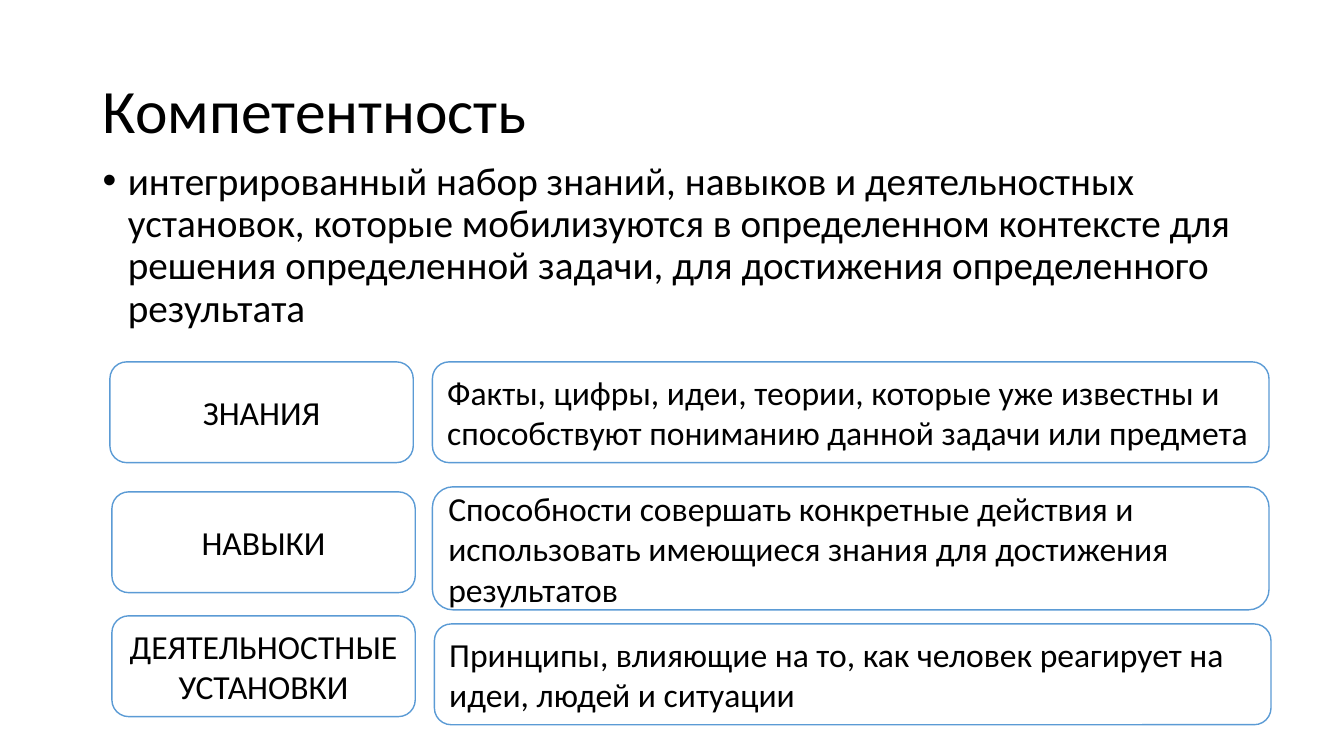
from lxml import etree
from pptx import Presentation
from pptx.dml.color import RGBColor
from pptx.enum.shapes import MSO_SHAPE as Shape
from pptx.enum.text import MSO_ANCHOR as Anchor, PP_ALIGN as Align
from pptx.oxml.ns import qn
from pptx.util import Emu, Inches, Pt

# Content
TITLE = "Компетентность"
DEFINITION = ("интегрированный набор знаний, навыков и деятельностных установок, "
              "которые мобилизуются в определенном контексте для решения "
              "определенной задачи, для достижения определенного результата")
# Each component: (name, left, top), (meaning, left, top, height)
COMPONENTS = [
    (("ЗНАНИЯ", 1.09, 3.59),
     ("Факты, цифры, идеи, теории, которые уже известны и способствуют "
      "пониманию данной задачи или предмета", 4.29, 3.59, 1)),
    (("НАВЫКИ", 1.11, 4.88),
     ("Способности совершать конкретные действия и использовать имеющиеся "
      "знания для достижения результатов", 4.29, 4.83, 1.22)),
    (("ДЕЯТЕЛЬНОСТНЫЕ УСТАНОВКИ", 1.11, 6.11),
     ("Принципы, влияющие на то, как человек реагирует на идеи, людей и "
      "ситуации", 4.31, 6.19, 1)),
]
NAME_WIDTH, MEANING_WIDTH, NAME_HEIGHT = 3.01, 8.3, 1
MARGIN, TEXT_WIDTH = 0.92, 11.5
FONT, INK, PAPER, OUTLINE = "Calibri", "000000", "FFFFFF", "5B9BD5"


def color(value):
    return RGBColor.from_string(value)


def write(shape, text, size, anchor=Anchor.MIDDLE, align=Align.LEFT,
          spacing=None, before=None, bullet=None):
    frame = shape.text_frame
    frame.word_wrap = True
    frame.vertical_anchor = anchor
    paragraph = frame.paragraphs[0]
    paragraph.alignment = align
    if spacing:
        paragraph.line_spacing = spacing
    if before:
        paragraph.space_before = Pt(before)
    if bullet:
        props = paragraph._p.get_or_add_pPr()
        props.set("marL", str(Inches(0.25)))
        props.set("indent", str(-Inches(0.25)))
        etree.SubElement(props, qn("a:buFont")).set("typeface", "Arial")
        etree.SubElement(props, qn("a:buChar")).set("char", bullet)
    run = paragraph.add_run()
    run.text = text
    run.font.name = FONT
    run.font.size = Pt(size)
    run.font.color.rgb = color(INK)


def add_card(slide, text, left, top, width, height, align):
    card = slide.shapes.add_shape(Shape.ROUNDED_RECTANGLE,
                                  *map(Inches, (left, top, width, height)))
    card.shadow.inherit = False
    card.fill.solid()
    card.fill.fore_color.rgb = color(PAPER)
    card.line.color.rgb = color(OUTLINE)
    card.line.width = Pt(1)
    write(card, text, 24, align=align)


def add_text(slide, text, top, height, size, **style):
    box = slide.shapes.add_textbox(*map(Inches, (MARGIN, top, TEXT_WIDTH, height)))
    write(box, text, size, spacing=0.9, **style)


def main():
    deck = Presentation()
    deck.slide_width, deck.slide_height = Emu(12192000), Inches(7.5)
    slide = deck.slides.add_slide(deck.slide_layouts[6])

    # Heading and definition
    add_text(slide, TITLE, 0.4, 1.45, 44)
    add_text(slide, DEFINITION, 1.55, 4.76, 28,
             anchor=Anchor.TOP, before=10, bullet="•")

    # Names on the left, meanings on the right
    for (name, name_left, name_top), (meaning, left, top, height) in COMPONENTS:
        add_card(slide, name, name_left, name_top, NAME_WIDTH, NAME_HEIGHT,
                 Align.CENTER)
        add_card(slide, meaning, left, top, MEANING_WIDTH, height, Align.LEFT)

    deck.save("out.pptx")


if __name__ == "__main__":
    main()
